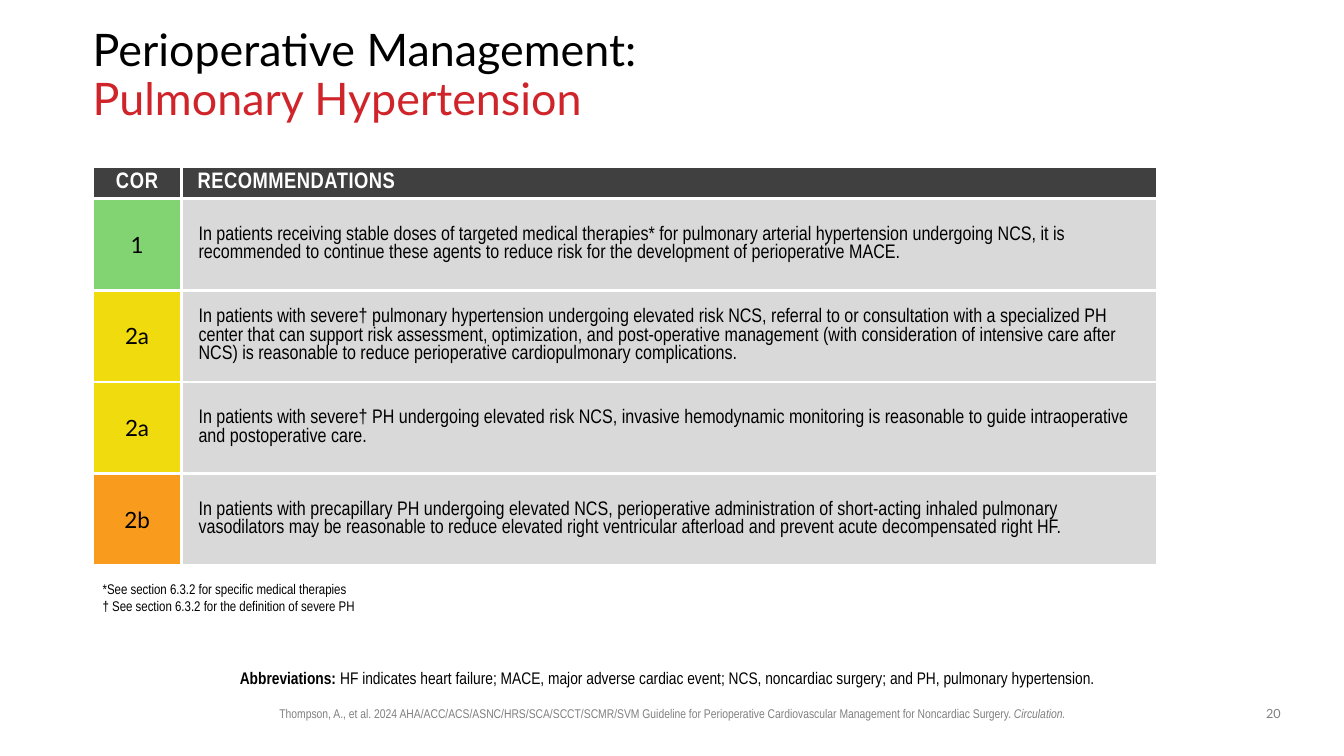
from lxml import etree
from pptx import Presentation
from pptx.dml.color import RGBColor
from pptx.enum.text import MSO_ANCHOR, PP_ALIGN
from pptx.oxml.ns import qn
from pptx.util import Inches, Pt

LEFT, CENTER = PP_ALIGN.LEFT, PP_ALIGN.CENTER
TOP, MIDDLE, BOTTOM = MSO_ANCHOR.TOP, MSO_ANCHOR.MIDDLE, MSO_ANCHOR.BOTTOM
NARROW, LATO = "Arial Narrow", "Lato"

COLORS = {
    "black": "000000", "white": "FFFFFF", "red": "CF2429", "ink": "231F20",
    "gray": "808080", "header": "404040", "panel": "D9D9D9",
    "1": "82D472", "2a": "F0DB0E", "2b": "F99B1D",
}

HEADINGS = ("COR", "RECOMMENDATIONS")
RECOMMENDATIONS = [
    ("1", "In patients receiving stable doses of targeted medical therapies* for pulmonary arterial "
          "hypertension undergoing NCS, it is recommended to continue these agents to reduce risk for "
          "the development of perioperative MACE."),
    ("2a", "In patients with severe† pulmonary hypertension undergoing elevated risk NCS, referral to or "
           "consultation with a specialized PH center that can support risk assessment, optimization, and "
           "post-operative management (with consideration of intensive care after NCS) is reasonable to "
           "reduce perioperative cardiopulmonary complications."),
    ("2a", "In patients with severe† PH undergoing elevated risk NCS, invasive hemodynamic monitoring is "
           "reasonable to guide intraoperative and postoperative care."),
    ("2b", "In patients with precapillary PH undergoing elevated NCS, perioperative administration of "
           "short-acting inhaled pulmonary vasodilators may be reasonable to reduce elevated right "
           "ventricular afterload and prevent acute decompensated right HF."),
]

PLAIN, BOLD, ITALIC = {}, {"bold": True}, {"italic": True}
INSET = (0.1, 0.05, 0.1, 0.05)

TEXTS = [
    {"at": (17.7, 92.67, 64.67, 3.33), "font": NARROW, "size": 9, "color": "gray", "align": CENTER,
     "lines": [[("Thompson, A., et al. 2024 AHA/ACC/ACS/ASNC/HRS/SCA/SCCT/SCMR/SVM Guideline for "
                 "Perioperative Cardiovascular Management for Noncardiac Surgery. ", PLAIN),
                ("Circulation.", ITALIC)]]},
    {"at": (6.9, 5.33, 86.27, 9.6), "font": LATO, "size": 32, "anchor": MIDDLE,
     "inset": (0, 0, 0, 0), "spacing": 0.9,
     "lines": [[("Perioperative Management:", PLAIN)],
               [("Pulmonary Hypertension", {"color": "red"})]]},
    {"at": (6.9, 76.13, 24.46, 5.87), "font": NARROW, "size": 10,
     "lines": [[("*See section 6.3.2 for specific medical therapies", PLAIN)],
               [("† ", {"bold": True, "color": "ink"}),
                ("See section 6.3.2 for the definition of severe PH", PLAIN)]]},
    {"at": (13.73, 85.6, 72.62, 6.13), "font": NARROW, "size": 12, "align": CENTER,
     "anchor": BOTTOM, "inset": (0, 0.05, 0.1, 0.05), "spacing": 0.9,
     "lines": [[("Abbreviations: ", BOLD),
                ("HF indicates heart failure; MACE, major adverse cardiac event; NCS, noncardiac "
                 "surgery; and PH, pulmonary hypertension.", PLAIN)]]},
    {"at": (93.17, 92.67, 3.15, 3.47), "font": LATO, "size": 9, "color": "gray", "align": CENTER,
     "lines": [[("20", PLAIN)]]},
]

TABLE_LEFT, TABLE_TOP = 6.9, 22
COLUMNS = (6.6, 72.6)
ROWS = (4.27,) + (12.13,) * len(RECOMMENDATIONS)
BORDER = Pt(2.25)

HEADER_STYLE = {"font": NARROW, "size": 16, "color": "white", "inset": (0.1, 0, 0.1, 0)}
CLASS_STYLE = {"font": LATO, "size": 16, "align": CENTER, "inset": (0.05,) * 4}
ADVICE_STYLE = {"font": NARROW, "size": 14, "indent": 0.12, "inset": (0.05, 0.05, 0.1, 0.05)}


def rgb(name):
    return RGBColor.from_string(COLORS[name])


def write(frame, lines, style):
    for number, line in enumerate(lines):
        paragraph = frame.paragraphs[0] if number == 0 else frame.add_paragraph()
        paragraph.alignment = style.get("align", LEFT)
        paragraph.line_spacing = style.get("spacing", 1.0)
        if "indent" in style:
            paragraph._p.get_or_add_pPr().set("marL", str(Inches(style["indent"])))
        for words, extra in line:
            run = paragraph.add_run()
            run.text = words
            look = {"name": style["font"], "size": Pt(style["size"]),
                    "bold": extra.get("bold", False), "italic": extra.get("italic", False)}
            for attribute, value in look.items():
                setattr(run.font, attribute, value)
            run.font.color.rgb = rgb(extra.get("color", style.get("color", "black")))
            if "tracking" in extra:
                run._r.get_or_add_rPr().set("spc", str(extra["tracking"]))


def set_insets(holder, inset):
    for side, length in zip(("left", "top", "right", "bottom"), inset):
        setattr(holder, f"margin_{side}", Inches(length))


def fill_cell(cell, words, extra, style, color):
    properties = cell._tc.get_or_add_tcPr()
    for edge in ("lnL", "lnR", "lnT", "lnB"):
        line = etree.SubElement(properties, qn(f"a:{edge}"), w=str(BORDER))
        solid = etree.SubElement(line, qn("a:solidFill"))
        etree.SubElement(solid, qn("a:srgbClr"), val=COLORS["white"])
    cell.fill.solid()
    cell.fill.fore_color.rgb = rgb(color)
    cell.vertical_anchor = MIDDLE
    set_insets(cell, style["inset"])
    write(cell.text_frame, [[(words, extra)]], style)


def main():
    deck = Presentation()
    deck.slide_width, deck.slide_height = Inches(13.33), Inches(7.5)
    slide = deck.slides.add_slide(deck.slide_layouts[6])

    def across(share):
        return round(deck.slide_width * share / 100)

    def down(share):
        return round(deck.slide_height * share / 100)

    for text in TEXTS:
        left, top, width, height = text["at"]
        frame = slide.shapes.add_textbox(across(left), down(top), across(width), down(height)).text_frame
        frame.word_wrap = True
        frame.vertical_anchor = text.get("anchor", TOP)
        set_insets(frame, text.get("inset", INSET))
        write(frame, text["lines"], text)

    table = slide.shapes.add_table(
        len(ROWS), len(COLUMNS), across(TABLE_LEFT), down(TABLE_TOP),
        across(sum(COLUMNS)), down(sum(ROWS))).table
    table.first_row = table.horz_banding = False
    for column, share in zip(table.columns, COLUMNS):
        column.width = across(share)
    for row, share in zip(table.rows, ROWS):
        row.height = down(share)

    layouts = ({"align": CENTER}, {"indent": 0.06})
    for column, (heading, layout, tracking) in enumerate(zip(HEADINGS, layouts, (50, 40))):
        fill_cell(table.cell(0, column), heading, {"bold": True, "tracking": tracking},
                  {**HEADER_STYLE, **layout}, "header")
    for row, (strength, advice) in enumerate(RECOMMENDATIONS, 1):
        fill_cell(table.cell(row, 0), strength, PLAIN, CLASS_STYLE, strength)
        fill_cell(table.cell(row, 1), advice, PLAIN, ADVICE_STYLE, "panel")

    deck.save("out.pptx")


if __name__ == "__main__":
    main()
